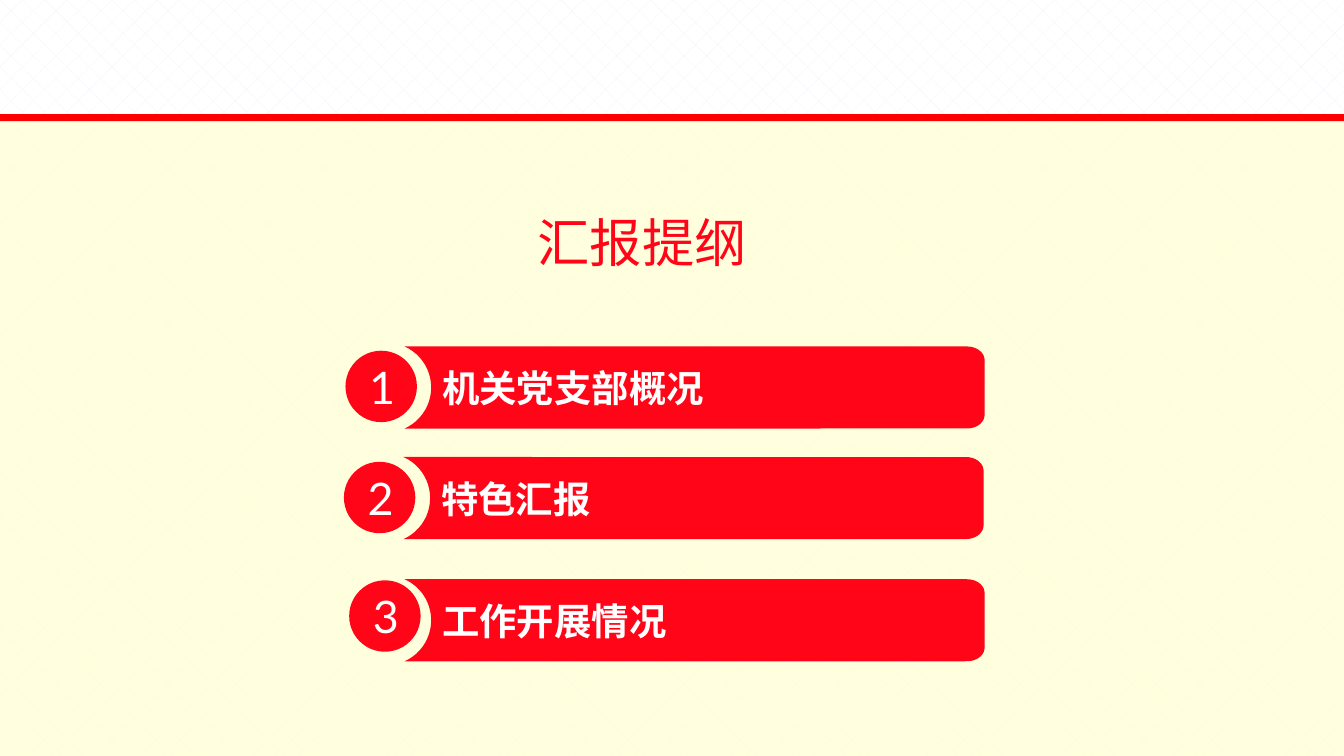
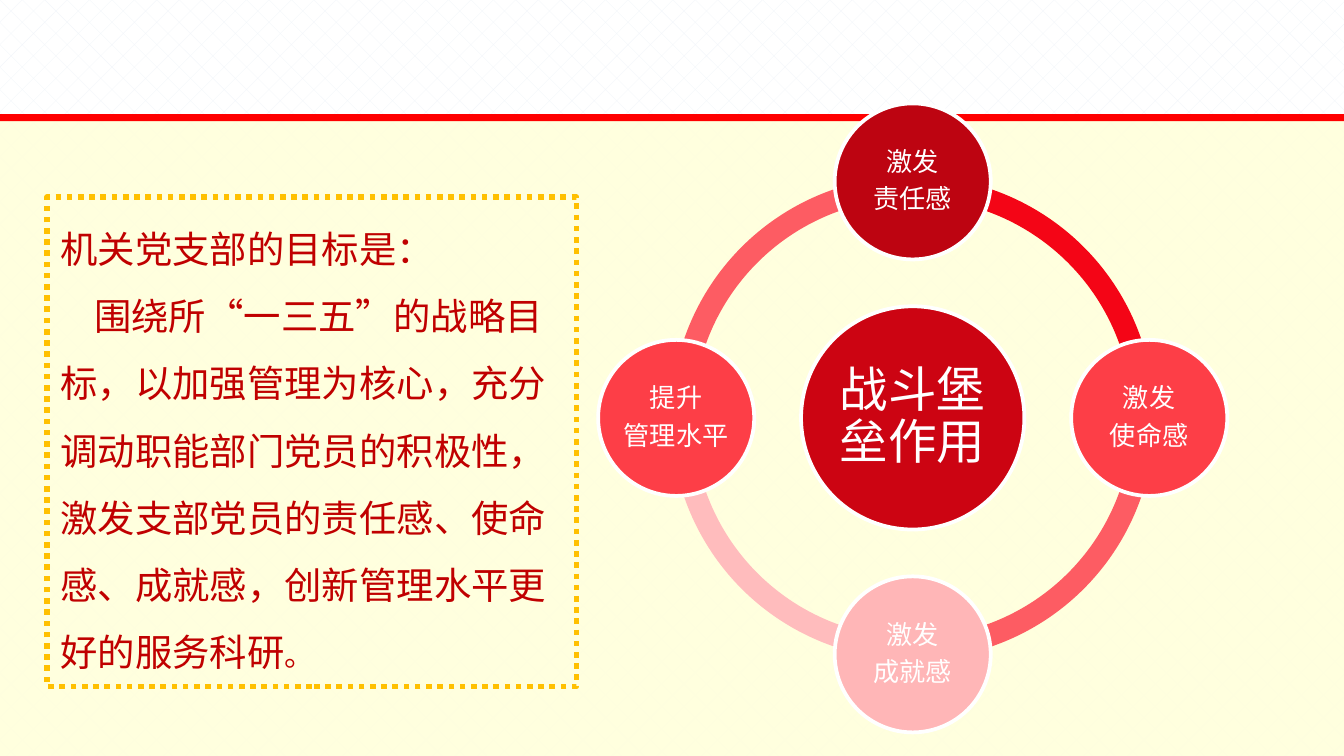
"""Build the outline slide and the goals slide of a party branch report."""
import math

import lxml.etree
import pptx
import pptx.dml.color
import pptx.enum.dml
import pptx.enum.shapes
import pptx.enum.text
import pptx.oxml.ns
import pptx.util

Cm = pptx.util.Cm
Pt = pptx.util.Pt
qn = pptx.oxml.ns.qn
rgb = pptx.dml.color.RGBColor.from_string
PRESET = pptx.enum.shapes.MSO_SHAPE
ALIGN = pptx.enum.text.PP_ALIGN
MIDDLE = pptx.enum.text.MSO_ANCHOR.MIDDLE
FIT = pptx.enum.text.MSO_AUTO_SIZE
RED, WHITE, CREAM = "FF0517", "FFFFFF", "FFFFDD"
HEADING_FONT = "Noto Sans CJK JP"


def style(shape, fill=None, line=None, width=2):
    """Set fill and outline, and drop the shadow."""
    shape.shadow.inherit = False
    for part, colour in ((shape.fill, fill), (shape.line.fill, line)):
        if colour:
            part.solid()
            part.fore_color.rgb = rgb(colour)
        else:
            part.background()
    if line:
        shape.line.width = Pt(width)


def write(shape, paragraphs, font, frame_format, paragraph_format):
    """Fill a shape with paragraphs, each a list of (text, size) runs."""
    frame = shape.text_frame
    for key, value in frame_format.items():
        setattr(frame, key, value)
    for index, runs in enumerate(paragraphs):
        paragraph = frame.add_paragraph() if index else frame.paragraphs[0]
        for key, value in paragraph_format.items():
            setattr(paragraph, key, value)
        for text, size in runs:
            run = paragraph.add_run()
            run.text = text
            run.font.size = Pt(size)
            run.font.name = font["name"]
            run.font.bold = font.get("bold", False)
            run.font.color.rgb = rgb(font["colour"])
            east_asian = lxml.etree.SubElement(run.font._element, qn("a:ea"))
            east_asian.set("typeface", font["name"])


deck = pptx.Presentation()
deck.slide_width, deck.slide_height = Cm(25.4), Cm(14.29)
outline = deck.slides.add_slide(deck.slide_layouts[5])
goals = deck.slides.add_slide(deck.slide_layouts[6])

master = deck.slide_master
backdrop = master.background.fill
backdrop.patterned()
backdrop.pattern = pptx.enum.dml.MSO_PATTERN.DIAGONAL_BRICK
backdrop.fore_color.rgb = rgb("F0F4FA")
backdrop.back_color.rgb = rgb(WHITE)
first_placeholder = master.shapes[0].element
for height, colour, opacity in ((12.13, CREAM, 95), (0.13, "FF0000", 100)):
    band = outline.shapes.add_shape(PRESET.RECTANGLE, 0, Cm(2.16), Cm(25.4), Cm(height))
    style(band, colour)
    if opacity < 100:
        alpha = lxml.etree.SubElement(band.element.find(".//" + qn("a:srgbClr")), qn("a:alpha"))
        alpha.set("val", str(opacity * 1000))
    first_placeholder.addprevious(band.element)

heading = outline.shapes.title
heading.left, heading.top, heading.width, heading.height = Cm(9.91), Cm(3.94), Cm(5.11), Cm(1.27)
write(heading, [[("汇报提纲", 28)]], {"name": HEADING_FONT, "colour": RED},
      {"vertical_anchor": MIDDLE, "auto_size": FIT.NONE}, {"alignment": ALIGN.LEFT})

BAR_WIDTH, BAR_HEIGHT = 10.97, 1.55
CORNER_X, CORNER_Y = 0.33, 0.26
BITE_RADIUS, BITE_CENTRE, BITE_ANGLE = 0.85, -0.34, 66
bar_outline = []
for start, corner_centre in ((-90, CORNER_Y), (0, BAR_HEIGHT - CORNER_Y)):
    for degrees in range(start, start + 91, 10):
        angle = math.radians(degrees)
        bar_outline.append((BAR_WIDTH - CORNER_X + CORNER_X * math.cos(angle),
                            corner_centre + CORNER_Y * math.sin(angle)))
for degrees in range(BITE_ANGLE, -BITE_ANGLE - 1, -6):
    angle = math.radians(degrees)
    bar_outline.append((BITE_CENTRE + BITE_RADIUS * math.cos(angle),
                        BAR_HEIGHT / 2 + BITE_RADIUS * math.sin(angle)))

topics = (
    ("机关党支部概况", 7.64, 6.55, 6.53, 6.63),
    ("特色汇报", 7.62, 8.64, 6.5, 8.73),
    ("工作开展情况", 7.64, 10.95, 6.6, 10.97),
)
for number, (topic, bar_left, bar_top, disc_left, disc_top) in enumerate(topics, 1):
    corners = [(Cm(bar_left + x), Cm(bar_top + y)) for x, y in bar_outline]
    builder = outline.shapes.build_freeform(*corners[0])
    builder.add_line_segments(corners[1:], close=True)
    bar = builder.convert_to_shape()
    style(bar, RED)
    write(bar, [[(topic, 20)]], {"name": HEADING_FONT, "colour": WHITE, "bold": True},
          {"vertical_anchor": MIDDLE, "word_wrap": True, "margin_left": Cm(0.71),
           "margin_right": Cm(0.1), "margin_top": Cm(0.1), "margin_bottom": Cm(0.1)},
          {"alignment": ALIGN.LEFT})
    disc = outline.shapes.add_shape(PRESET.OVAL, Cm(disc_left), Cm(disc_top), Cm(1.35), Cm(1.35))
    style(disc, RED)
    write(disc, [[(str(number), 24)]], {"name": "Lato", "colour": WHITE},
          {"vertical_anchor": MIDDLE}, {"alignment": ALIGN.CENTER})

RING_X, RING_Y, RING_SIZE, ORBIT = 17.25, 7.9, 9.14, 4.47
arcs = ((108, 162, "FD5C63"), (54, 108, "FFBCBD"), (0, 54, "FD5C63"), (162, 0, "F40516"))
for start, end, colour in arcs:
    arc = goals.shapes.add_shape(PRESET.BLOCK_ARC, Cm(RING_X - RING_SIZE / 2),
                                 Cm(RING_Y - RING_SIZE / 2), Cm(RING_SIZE), Cm(RING_SIZE))
    for index, value in enumerate((start, end, 0.046)):
        arc.adjustments[index] = value
    style(arc, colour)

nodes = (
    (["战斗堡垒作用"], 0, 0, 4.22, 26, 0.1, "CC0412"),
    (["激发", "责任感"], 0, -1, 2.95, 14, 0.05, "BD0411"),
    (["激发", "使命感"], 1, 0, 2.95, 14, 0.05, "FD3E47"),
    (["激发", "成就感"], 0, 1, 2.95, 14, 0.05, "FFB6B7"),
    (["提升", "管理水平"], -1, 0, 2.95, 14, 0.05, "FD3E47"),
)
for lines, across, down, size, points, margin, colour in nodes:
    node = goals.shapes.add_shape(PRESET.OVAL, Cm(RING_X + across * ORBIT - size / 2),
                                  Cm(RING_Y + down * ORBIT - size / 2), Cm(size), Cm(size))
    style(node, colour, WHITE)
    margins = {f"margin_{side}": Cm(margin) for side in ("left", "right", "top", "bottom")}
    write(node, [[(line, points)] for line in lines], {"name": "Calibri", "colour": WHITE},
          {"vertical_anchor": MIDDLE, "word_wrap": True, **margins},
          {"alignment": ALIGN.CENTER, "line_spacing": 0.9, "space_after": Pt(0.35 * points)})

aim = goals.shapes.add_shape(PRESET.RECTANGLE, Cm(0.89), Cm(3.73), Cm(10.01), Cm(9.25))
style(aim, None, "FFC000", 3)
aim.line.dash_style = pptx.enum.dml.MSO_LINE.ROUND_DOT
write(aim, [
    [("机关党支部的目标是：", 20)],
    [("围绕所“一三五”的战略目标，以加强管理为核心，充分调动职能部门党员的积极性，"
      "激发支部党员的责任感、使命感、成就感，创新管理水平更好的服务科研", 20), ("。", 16)],
], {"name": "Noto Sans CJK SC", "colour": "C00000"},
    {"vertical_anchor": pptx.enum.text.MSO_ANCHOR.TOP, "word_wrap": True,
     "auto_size": FIT.SHAPE_TO_FIT_TEXT},
    {"alignment": ALIGN.LEFT, "line_spacing": 1.5})
aim.text_frame.paragraphs[1]._p.get_or_add_pPr().set("indent", str(Cm(0.64)))

deck.save("out.pptx")
